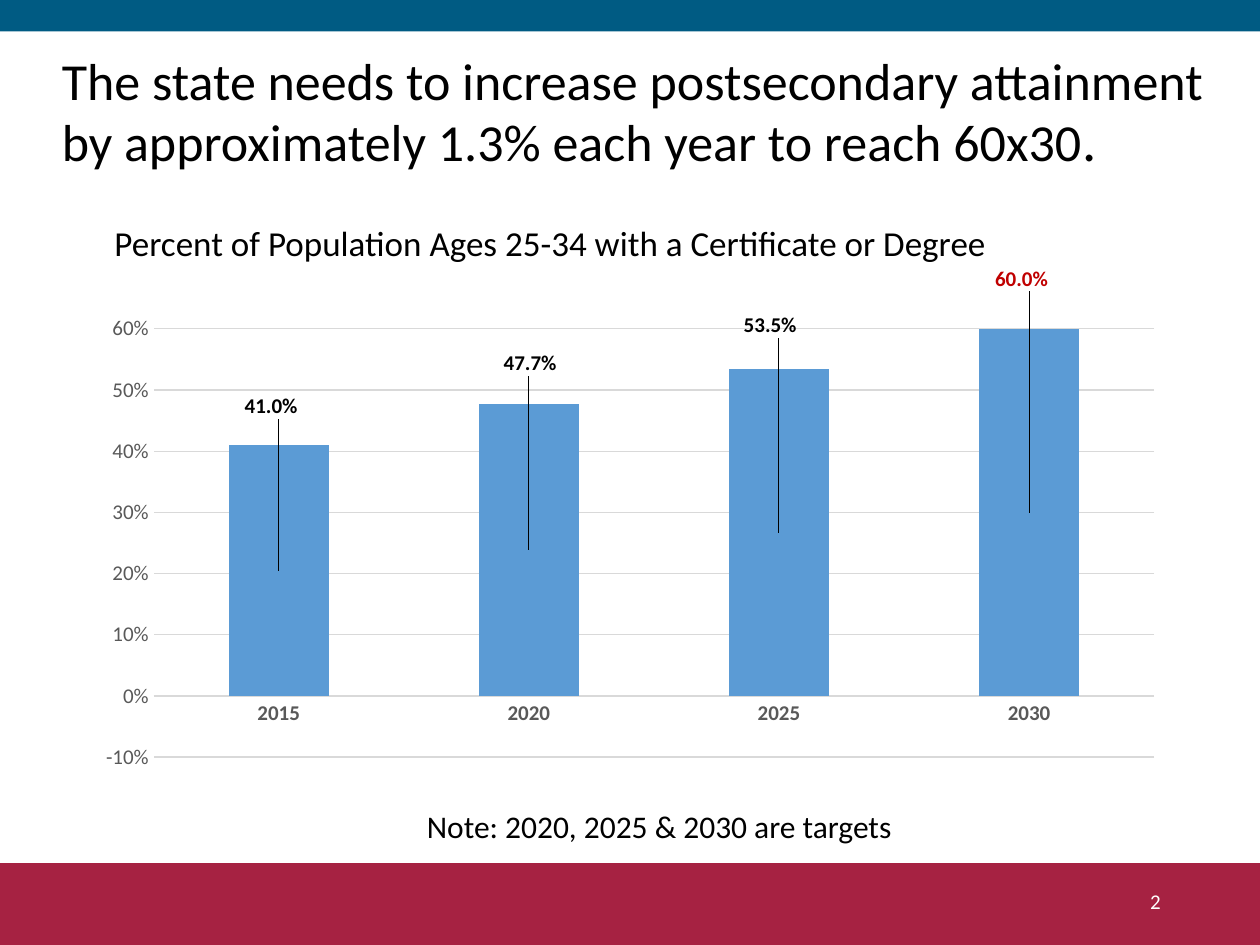
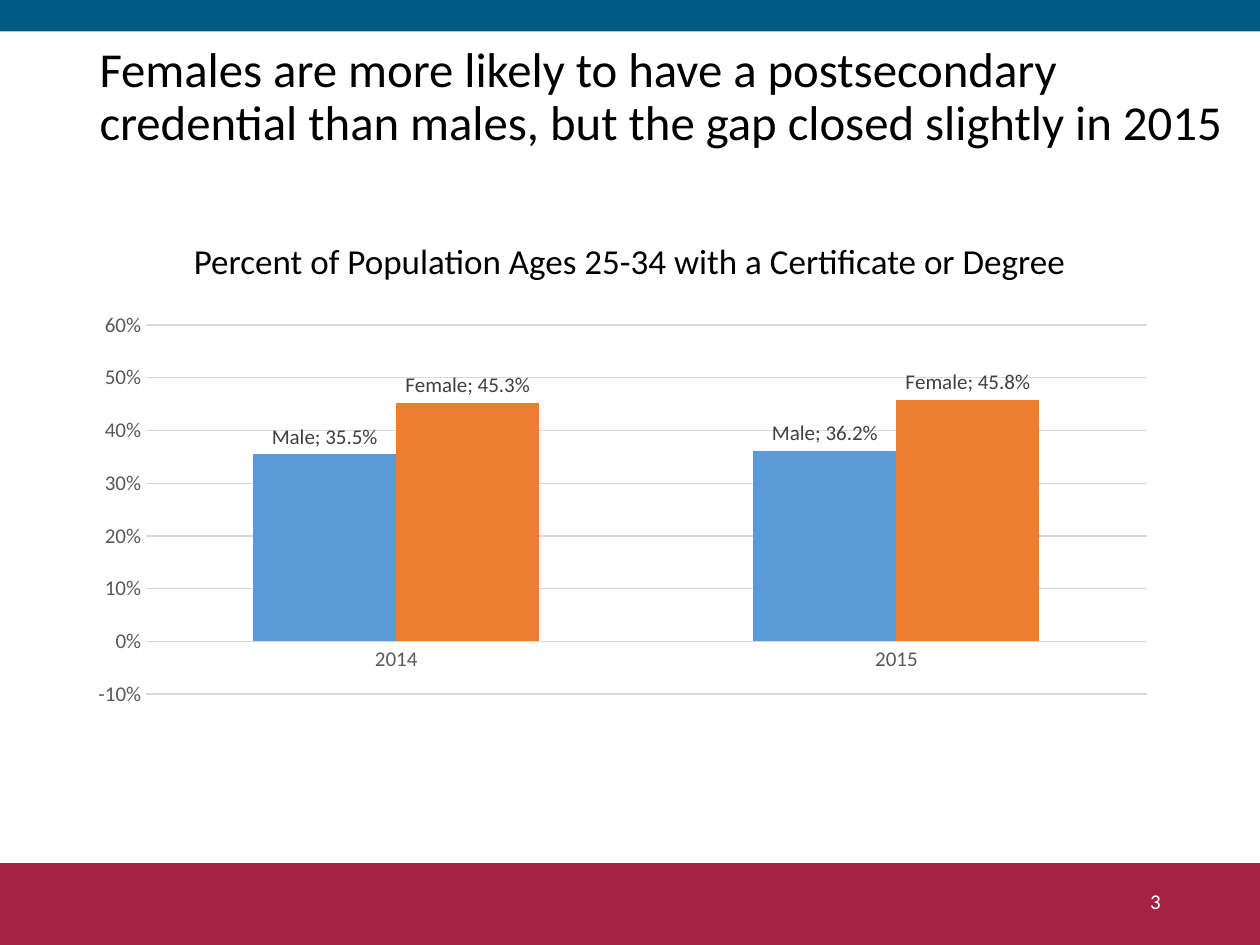
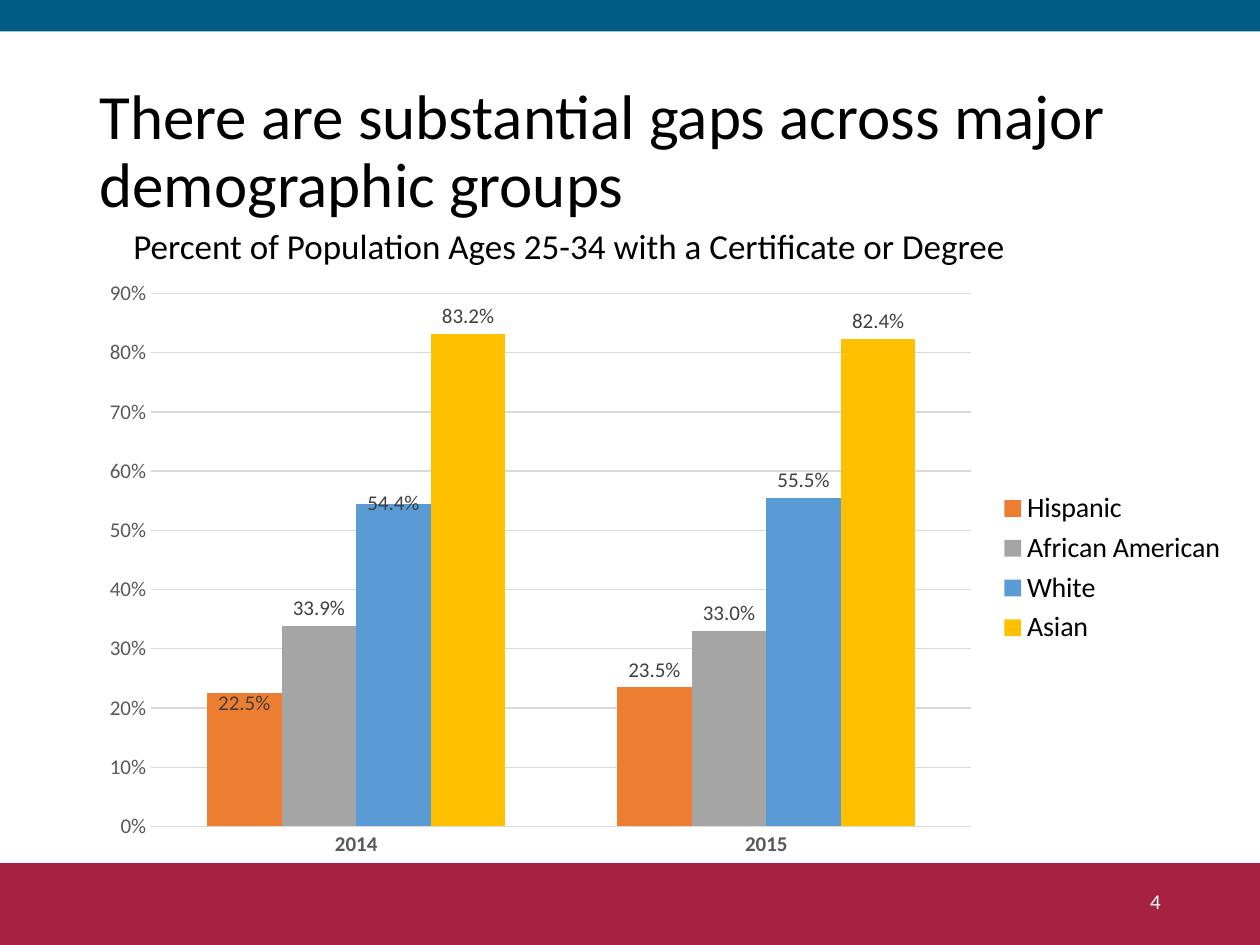
"""Build three slides on postsecondary attainment, each with a column chart."""
import dataclasses

import pptx
import pptx.chart.data
import pptx.dml.color
import pptx.enum.chart
import pptx.enum.shapes
import pptx.enum.text
import pptx.oxml
import pptx.oxml.ns
import pptx.util

PX = 9144
ALIGN = pptx.enum.text.PP_ALIGN
ANCHOR = pptx.enum.text.MSO_ANCHOR
CHART = pptx.enum.chart


@dataclasses.dataclass(frozen=True)
class Theme:
    font: str = "Calibri"
    black: str = "000000"
    white: str = "FFFFFF"
    top_band: str = "005B83"
    bottom_band: str = "A62242"
    axis_text: str = "595959"
    label_text: str = "404040"
    grid: str = "D9D9D9"
    goal: str = "C00000"
    blue: str = "5B9BD5"
    orange: str = "ED7D31"
    gray: str = "A5A5A5"
    gold: str = "FFC000"
    caption_size: int = 20
    note_size: int = 18
    legend_size: int = 16
    small_size: int = 12


THEME = Theme()
CAPTION = "Percent of Population Ages 25-34 with a Certificate or Degree"


def style_font(font, size, color, bold=False):
    font.name = THEME.font
    font.size = pptx.util.Pt(size)
    font.bold = bold
    font.color.rgb = pptx.dml.color.RGBColor.from_string(color)


def layout_element(chart_size, offset, plot_size=None):
    parts = dict(zip("xy", (offset[0] / chart_size[0], offset[1] / chart_size[1])))
    modes = ""
    if plot_size:
        parts.update(w=plot_size[0] / chart_size[0], h=plot_size[1] / chart_size[1])
        modes = '<c:layoutTarget val="inner"/><c:xMode val="edge"/><c:yMode val="edge"/>'
    values = "".join(f'<c:{name} val="{part:.4f}"/>' for name, part in parts.items())
    return pptx.oxml.parse_xml(
        f'<c:layout {pptx.oxml.ns.nsdecls("c")}><c:manualLayout>'
        f"{modes}{values}</c:manualLayout></c:layout>"
    )


PAGES = [
    dict(
        title=[
            ("The state needs to increase postsecondary attainment by approximately "
             "1.3% each year to reach 60x30", 29.7),
            (".", 32.4),
        ],
        title_box=(39, 40, 942, 102),
        chart_type=CHART.XL_CHART_TYPE.COLUMN_STACKED,
        chart_box=(69, 211, 862, 426),
        plot_box=(53, 50, 794, 340),
        years=["2015", "2020", "2025", "2030"],
        series=[("Series 1", [0.41, 0.477, 0.535, 0.6], THEME.blue)],
        scale=(-0.1, 0.6),
        bold_years=True,
        label_style=(THEME.small_size, THEME.black, True),
        label_names=False,
        moved_labels=[
            (0, 0, -6, -130, THEME.black),
            (0, 1, 1, -148, THEME.black),
            (0, 2, -7, -164, THEME.black),
            (0, 3, -6, -185, THEME.goal),
        ],
        legend=False,
        texts=[
            (CAPTION, (81, 171, 772, 44), THEME.caption_size),
            ("Note: 2020, 2025 & 2030 are targets", (329, 636, 420, 40), THEME.note_size),
        ],
    ),
    dict(
        title=[("Females are more likely to have a postsecondary credential than males, "
                "but the gap closed slightly in 2015", 27.9)],
        title_box=(69, 30, 921, 96),
        chart_type=CHART.XL_CHART_TYPE.COLUMN_CLUSTERED,
        chart_box=(69, 243, 862, 394),
        plot_box=(47, 15, 794, 293),
        years=["2014", "2015"],
        series=[
            ("Male", [0.355, 0.362], THEME.blue),
            ("Female", [0.453, 0.458], THEME.orange),
        ],
        scale=(-0.1, 0.6),
        bold_years=False,
        label_style=(THEME.small_size, THEME.label_text),
        label_names=True,
        moved_labels=[],
        legend=False,
        texts=[(CAPTION, (144, 185, 777, 44), THEME.caption_size)],
    ),
    dict(
        title=[("There are substantial gaps across major demographic groups", 36)],
        title_box=(69, 49, 819, 145),
        chart_type=CHART.XL_CHART_TYPE.COLUMN_CLUSTERED,
        chart_box=(69, 213, 915, 476),
        plot_box=(51, 20, 651, 423),
        years=["2014", "2015"],
        series=[
            ("Hispanic", [0.225, 0.235], THEME.orange),
            ("African American", [0.339, 0.33], THEME.gray),
            ("White", [0.544, 0.555], THEME.blue),
            ("Asian", [0.832, 0.824], THEME.gold),
        ],
        scale=(0, 0.9),
        bold_years=True,
        label_style=(THEME.small_size, THEME.label_text),
        label_names=False,
        moved_labels=[
            (0, 0, 0, 22, THEME.label_text),
            (2, 0, 0, 13, THEME.label_text),
        ],
        legend=True,
        texts=[(CAPTION, (96, 173, 883, 44), THEME.caption_size)],
    ),
]

deck = pptx.Presentation()
deck.slide_width, deck.slide_height = 1000 * PX, 750 * PX
layout = deck.slide_layouts[5]

for number, page in enumerate(PAGES, start=2):
    slide = deck.slides.add_slide(layout)

    if number == 2:
        for top, height, color in ((685, 65, THEME.bottom_band), (0, 25, THEME.top_band)):
            band = slide.shapes.add_shape(
                pptx.enum.shapes.MSO_SHAPE.RECTANGLE, 0, top * PX, 1000 * PX, height * PX
            )
            band.shadow.inherit = False
            band.fill.solid()
            band.fill.fore_color.rgb = pptx.dml.color.RGBColor.from_string(color)
            band.line.fill.background()
            layout.shapes.element.insert(2, band.element)

    title = slide.shapes.title
    title.left, title.top, title.width, title.height = (n * PX for n in page["title_box"])
    title.text_frame.word_wrap = True
    title.text_frame.auto_size = pptx.enum.text.MSO_AUTO_SIZE.NONE
    title.text_frame.vertical_anchor = ANCHOR.MIDDLE
    para = title.text_frame.paragraphs[0]
    para.alignment = ALIGN.LEFT
    para.line_spacing = 0.9
    for text, size in page["title"]:
        span = para.add_run()
        span.text = text
        style_font(span.font, size, THEME.black)

    data = pptx.chart.data.CategoryChartData(number_format="0.0%")
    data.categories = page["years"]
    for name, values, color in page["series"]:
        data.add_series(name, values)
    chart = slide.shapes.add_chart(
        page["chart_type"], *(n * PX for n in page["chart_box"]), data
    ).chart
    chart_size = page["chart_box"][2:]
    clustered = page["chart_type"] == CHART.XL_CHART_TYPE.COLUMN_CLUSTERED
    style_font(chart.font, 10, THEME.black)
    chart.has_title = False
    chart.has_legend = page["legend"]
    if page["legend"]:
        chart.legend.position = CHART.XL_LEGEND_POSITION.RIGHT
        chart.legend.include_in_layout = False
        style_font(chart.legend.font, THEME.legend_size, THEME.black)

    plot = chart.plots[0]
    plot.vary_by_categories = False
    plot.gap_width = 150
    plot.overlap = 0 if clustered else 100
    chart.element.chart.plotArea.insert(
        0, layout_element(chart_size, page["plot_box"][:2], page["plot_box"][2:])
    )

    year_axis, percent_axis = chart.category_axis, chart.value_axis
    percent_axis.minimum_scale, percent_axis.maximum_scale = page["scale"]
    percent_axis.major_unit = 0.1
    percent_axis.has_major_gridlines = True
    percent_axis.tick_labels.number_format = "0%"
    percent_axis.tick_labels.number_format_is_linked = False
    percent_axis.format.line.fill.background()
    for line in (year_axis.format.line, percent_axis.major_gridlines.format.line):
        line.width = pptx.util.Pt(0.75)
        line.color.rgb = pptx.dml.color.RGBColor.from_string(THEME.grid)
    for axis, bold in ((year_axis, page["bold_years"]), (percent_axis, False)):
        axis.major_tick_mark = axis.minor_tick_mark = CHART.XL_TICK_MARK.NONE
        style_font(axis.tick_labels.font, THEME.small_size, THEME.axis_text, bold)

    for series, (name, values, color) in zip(plot.series, page["series"]):
        series.format.fill.solid()
        series.format.fill.fore_color.rgb = pptx.dml.color.RGBColor.from_string(color)
        labels = series.data_labels
        labels.show_value = True
        labels.show_series_name = page["label_names"]
        labels.number_format = "0.0%"
        labels.number_format_is_linked = False
        style_font(labels.font, *page["label_style"])
        if clustered:
            labels.position = CHART.XL_LABEL_POSITION.OUTSIDE_END

    for series_index, point_index, right, down, color in page["moved_labels"]:
        label = plot.series[series_index].points[point_index].data_label
        style_font(label.font, THEME.small_size, color, not clustered)
        if clustered:
            label.position = CHART.XL_LABEL_POSITION.OUTSIDE_END
    for label_element, move in zip(chart.element.xpath(".//c:dLbl"), page["moved_labels"]):
        label_element.insert(1, layout_element(chart_size, move[2:4]))

    page_number = (str(number), (706, 695, 225, 40), THEME.small_size)
    for text, place, size in [page_number, *page["texts"]]:
        is_number = text == str(number)
        box = slide.shapes.add_textbox(*(n * PX for n in place))
        box.text_frame.word_wrap = True
        box.text_frame.vertical_anchor = ANCHOR.MIDDLE if is_number else ANCHOR.TOP
        box.text_frame.text = text
        para = box.text_frame.paragraphs[0]
        para.alignment = ALIGN.RIGHT if is_number else ALIGN.LEFT
        style_font(para.runs[0].font, size, THEME.white if is_number else THEME.black)

deck.save("out.pptx")
